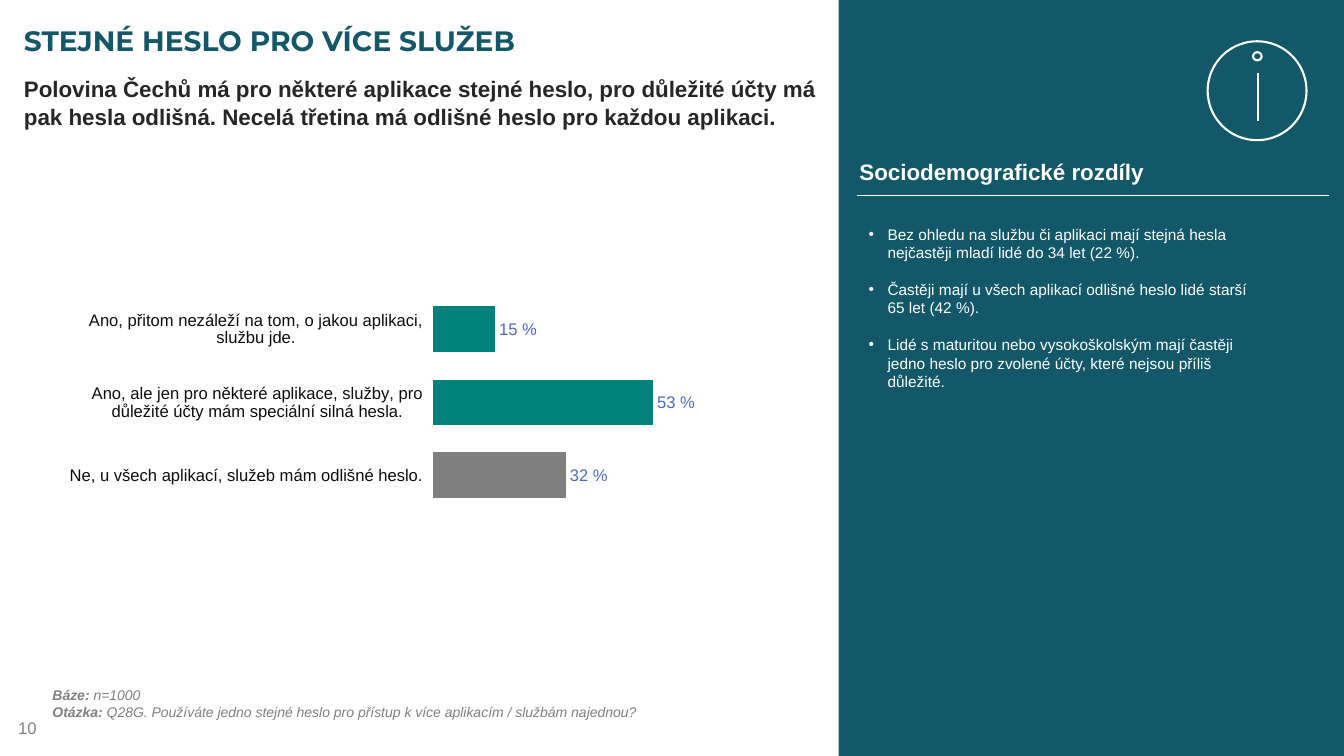
from lxml import etree
from pptx import Presentation
from pptx.chart.data import CategoryChartData
from pptx.dml.color import RGBColor
from pptx.enum.chart import XL_CHART_TYPE, XL_LABEL_POSITION, XL_TICK_LABEL_POSITION, XL_TICK_MARK
from pptx.enum.shapes import MSO_CONNECTOR, MSO_SHAPE
from pptx.enum.text import MSO_ANCHOR
from pptx.oxml import parse_xml
from pptx.oxml.ns import nsdecls, qn
from pptx.util import Pt

BAR_CLUSTERED = XL_CHART_TYPE.BAR_CLUSTERED
OUTSIDE_END = XL_LABEL_POSITION.OUTSIDE_END
LABELS_LOW = XL_TICK_LABEL_POSITION.LOW
NO_TICK = XL_TICK_MARK.NONE
STRAIGHT = MSO_CONNECTOR.STRAIGHT
RECTANGLE, OVAL = MSO_SHAPE.RECTANGLE, MSO_SHAPE.OVAL
TOP, MIDDLE = MSO_ANCHOR.TOP, MSO_ANCHOR.MIDDLE

PETROL = RGBColor(0x13, 0x58, 0x68)
TEAL = RGBColor(0x00, 0x82, 0x7A)
BAR_GRAY = RGBColor(0x7F, 0x7F, 0x7F)
NOTE_GRAY = RGBColor(0x80, 0x80, 0x80)
DARK = RGBColor(0x26, 0x26, 0x26)
AXIS_TEXT = RGBColor(0x0D, 0x0D, 0x0D)
LABEL_BLUE = RGBColor(0x4E, 0x68, 0xCA)
WHITE = RGBColor(0xFF, 0xFF, 0xFF)

# Content
TITLE = "STEJNÉ HESLO PRO VÍCE SLUŽEB"
MESSAGE = ("Polovina Čechů má pro některé aplikace stejné heslo, pro důležité účty má "
           "pak hesla odlišná. Necelá třetina má odlišné heslo pro každou aplikaci.")
ANSWERS = [
    ("Ano, přitom nezáleží na tom, o jakou aplikaci, službu jde.", 15, TEAL),
    ("Ano, ale jen pro některé aplikace, služby, pro důležité účty mám speciální silná hesla.",
     53, TEAL),
    ("Ne, u všech aplikací, služeb mám odlišné heslo.", 32, BAR_GRAY),
]
SIDE_HEADING = "Sociodemografické rozdíly"
DIFFERENCES = [
    "Bez ohledu na službu či aplikaci mají stejná hesla nejčastěji mladí lidé do 34 let (22 %).",
    "Častěji mají u všech aplikací odlišné heslo lidé starší 65 let (42 %).",
    "Lidé s maturitou nebo vysokoškolským mají častěji jedno heslo pro zvolené účty, "
    "které nejsou příliš důležité.",
]
NOTES = [
    ("Báze:", " n=1000"),
    ("Otázka:", " Q28G. Používáte jedno stejné heslo pro přístup k více aplikacím / "
                "službám najednou?"),
]
PAGE_NUMBER = "10"

deck = Presentation()
deck.slide_width, deck.slide_height = Pt(960), Pt(540)
page = deck.slides.add_slide(deck.slide_layouts[6])


def style(font, size, color, bold=False, italic=False, name="Arial"):
    font.name, font.size, font.bold, font.italic = name, Pt(size), bold, italic
    font.color.rgb = color


def add_box(left, top, width, height, anchor=TOP, margins=(7.2, 3.6), wrap=True):
    frame = page.shapes.add_textbox(Pt(left), Pt(top), Pt(width), Pt(height)).text_frame
    frame.word_wrap, frame.vertical_anchor = wrap, anchor
    frame.margin_left = frame.margin_right = Pt(margins[0])
    frame.margin_top = frame.margin_bottom = Pt(margins[1])
    return frame


def add_line_of_text(frame, text, *look, **options):
    para = frame.paragraphs[0]
    para.text = text
    style(para.font, *look, **options)
    return para


def add_shape(kind, left, top, width, height, fill=None):
    shape = page.shapes.add_shape(kind, Pt(left), Pt(top), Pt(width), Pt(height))
    shape.shadow.inherit = False
    if fill is None:
        shape.fill.background()
        shape.line.color.rgb, shape.line.width = WHITE, Pt(1.5)
    else:
        shape.fill.solid()
        shape.fill.fore_color.rgb = fill
        shape.line.fill.background()


def add_rule(x1, y1, x2, y2, weight):
    rule = page.shapes.add_connector(STRAIGHT, Pt(x1), Pt(y1), Pt(x2), Pt(y2))
    rule.line.color.rgb, rule.line.width = WHITE, Pt(weight)
    etree.SubElement(rule._element.spPr, qn("a:effectLst"))


# Page number, side panel, title and message
add_line_of_text(add_box(3.6, 505.5, 224, 28.8, MIDDLE, (9.4, 5)), PAGE_NUMBER, 12, NOTE_GRAY)
add_shape(RECTANGLE, 599, 0, 361, 540, PETROL)
add_line_of_text(add_box(10, 10, 580, 38, MIDDLE), TITLE, 20, PETROL, bold=True,
                 name="Montserrat")
message = add_line_of_text(add_box(10, 49, 589, 50.4), MESSAGE, 16, DARK, bold=True)
message.line_spacing = 1.05

# Notes under the chart
frame = add_box(37.5, 490.3, 834, 24.5, margins=(0, 0))
for index, (lead, rest) in enumerate(NOTES):
    para = frame.paragraphs[0] if index == 0 else frame.add_paragraph()
    for text, bold in ((lead, True), (rest, False)):
        span = para.add_run()
        span.text = text
        style(span.font, 10, NOTE_GRAY, bold, italic=True)

# Side panel text
add_rule(612, 139.5, 949.5, 139.5, 0.5)
add_line_of_text(add_box(606.8, 109.5, 220, 26.6, wrap=False), SIDE_HEADING, 16, WHITE, bold=True)
frame = add_box(613.4, 157, 300, 127.4)
for index, text in enumerate(DIFFERENCES):
    para = frame.paragraphs[0] if index == 0 else frame.add_paragraph()
    para.text = text
    if index:
        para.space_before = Pt(13)
    properties = para._p.get_or_add_pPr()
    properties.set("marL", str(Pt(13.5)))
    properties.set("indent", str(Pt(-13.5)))
    etree.SubElement(properties, qn("a:buFont")).set("typeface", "Arial")
    etree.SubElement(properties, qn("a:buChar")).set("char", "•")
    style(para.font, 11, WHITE)

# Information icon
add_shape(OVAL, 862.6, 29.5, 70.6, 70.6)
add_rule(898.3, 52.3, 898.3, 86.5, 1.5)
add_shape(OVAL, 895, 37.3, 6.2, 5.8)

# Bar chart
data = CategoryChartData()
data.categories = [answer for answer, _, _ in ANSWERS]
data.add_series("Series 1", [share for _, share, _ in ANSWERS])
chart = page.shapes.add_chart(BAR_CLUSTERED, Pt(49.7), Pt(193.7), Pt(556.6), Pt(172), data).chart
chart.has_legend = chart.has_title = False
style(chart.font, 10, LABEL_BLUE)

axis = chart.category_axis
axis.reverse_order = True
axis.major_tick_mark = axis.minor_tick_mark = NO_TICK
axis.tick_label_position = LABELS_LOW
axis.format.line.fill.background()
style(axis.tick_labels.font, 12, AXIS_TEXT)

scale = chart.value_axis
scale.minimum_scale, scale.maximum_scale = 0, 100
scale.has_major_gridlines = scale.visible = False

plot = chart.plots[0]
plot.gap_width, plot.vary_by_categories = 60, False
bars = plot.series[0]
bars.format.fill.solid()
bars.format.fill.fore_color.rgb = TEAL
for index, (_, _, color) in enumerate(ANSWERS):
    if color != TEAL:
        fill = bars.points[index].format.fill
        fill.solid()
        fill.fore_color.rgb = color
labels = bars.data_labels
labels.show_value, labels.position = True, OUTSIDE_END
labels.number_format, labels.number_format_is_linked = '#,##0" %"', False
style(labels.font, 12, LABEL_BLUE)

# Fixed inner plot area, as fractions of the chart
area = chart._chartSpace.chart.plotArea
for old in area.findall(qn("c:layout")):
    area.remove(old)
places = "".join(f'<c:{name} val="{value}"/>' for name, value in (
    ("layoutTarget", "inner"), ("xMode", "edge"), ("yMode", "edge"),
    ("x", 0.46), ("y", 0.09), ("w", 0.54), ("h", 0.91)))
area.insert(0, parse_xml(
    f'<c:layout {nsdecls("c")}><c:manualLayout>{places}</c:manualLayout></c:layout>'))

deck.save("out.pptx")
